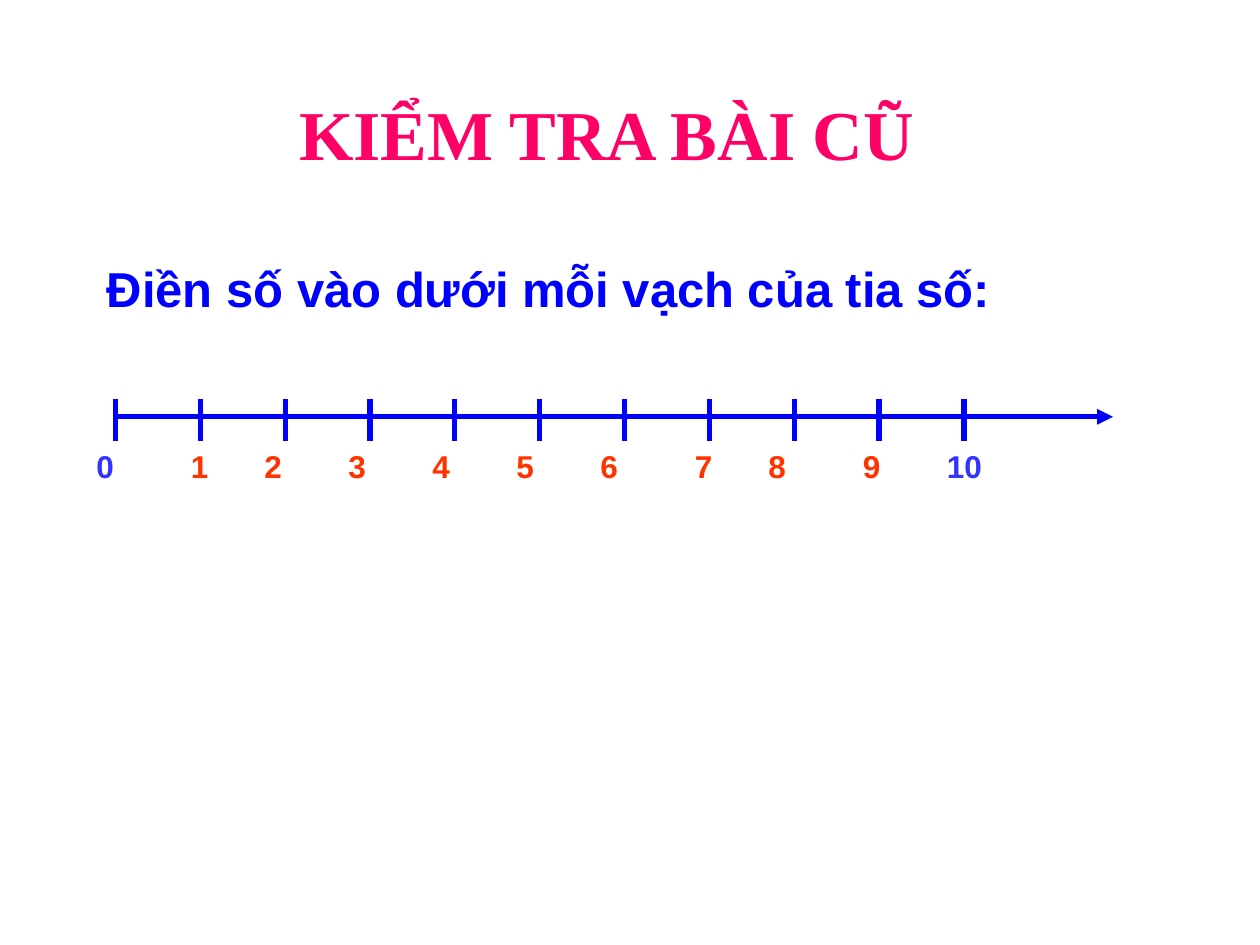
"""Build a lesson slide with a number ray from 0 to 10."""
from lxml import etree
from pptx import Presentation
from pptx import util as u
from pptx.dml.color import RGBColor
from pptx.enum import shapes, text
from pptx.oxml.ns import qn

HUES = {"title": "FF0066", "ray": "0000FF", "end": "3333FF", "mid": "FF3300"}
WIDE, HIGH = u.Inches(10), u.Inches(7.5)
COLS, ROWS = 120, 90
LATE = {1, 7, 9, 10}


def col(n):
    """Return the distance of n grid columns."""
    return round(WIDE * n / COLS)


def row(n):
    """Return the distance of n grid rows."""
    return round(HIGH * n / ROWS)


def label(slide, words, box, size, hue, font="Arial", inset=0.1):
    """Add a bold line of text in a box of grid units."""
    x, y, w, h = box
    frame = slide.shapes.add_textbox(col(x), row(y), col(w), row(h)).text_frame
    frame.word_wrap = True
    frame.auto_size = text.MSO_AUTO_SIZE.SHAPE_TO_FIT_TEXT
    frame.margin_left = u.Inches(inset)
    para = frame.paragraphs[0]
    para.text = words
    para.font.size = u.Pt(size)
    para.font.name = font
    para.font.bold = True
    para.font.color.rgb = RGBColor.from_string(HUES[hue])
    gap = etree.Element(qn("a:spcBef"))
    etree.SubElement(gap, qn("a:spcPct"), val="50000")
    para._p.get_or_add_pPr().insert(0, gap)


def stroke(group, x1, y1, x2, y2, arrow=False):
    """Add a straight line, with an arrowhead if asked."""
    line = group.shapes.add_connector(
        shapes.MSO_CONNECTOR.STRAIGHT, col(x1), row(y1), col(x2), row(y2))
    line.line.color.rgb = RGBColor.from_string(HUES["ray"])
    line.line.width = u.Pt(3)
    if arrow:
        etree.SubElement(line.line._get_or_add_ln(), qn("a:tailEnd"), type="triangle")
    etree.SubElement(line._element.spPr, qn("a:effectLst"))


def ray(slide, left=11, step=8.08, count=11):
    """Draw the number ray and its evenly spaced ticks."""
    group = slide.shapes.add_group_shape()
    stroke(group, left, 39.7, 106, 39.7, arrow=True)
    for n in range(count):
        x = left + n * step
        stroke(group, x, 38, x, 42)


def digits(slide, last=10):
    """Write the numbers below the ticks."""
    for n in range(last + 1):
        x = 8 * (n + 1) + (n in LATE)
        hue = "end" if n in (0, last) else "mid"
        label(slide, str(n), (x, 42, 11 if n == last else 6, 4.8), 18, hue)


def main():
    """Build and save the slide."""
    deck = Presentation()
    deck.slide_width, deck.slide_height = WIDE, HIGH
    slide = deck.slides.add_slide(deck.slide_layouts[6])
    label(slide, "KIỂM TRA BÀI CŨ", (26, 8, 72, 9.24), 40, "title",
          "Times New Roman", 0.21)
    ray(slide)
    digits(slide)
    label(slide, "Điền số vào dưới mỗi vạch của tia số:", (9, 24, 89, 6.84), 28, "ray")
    deck.save("out.pptx")


if __name__ == "__main__":
    main()
